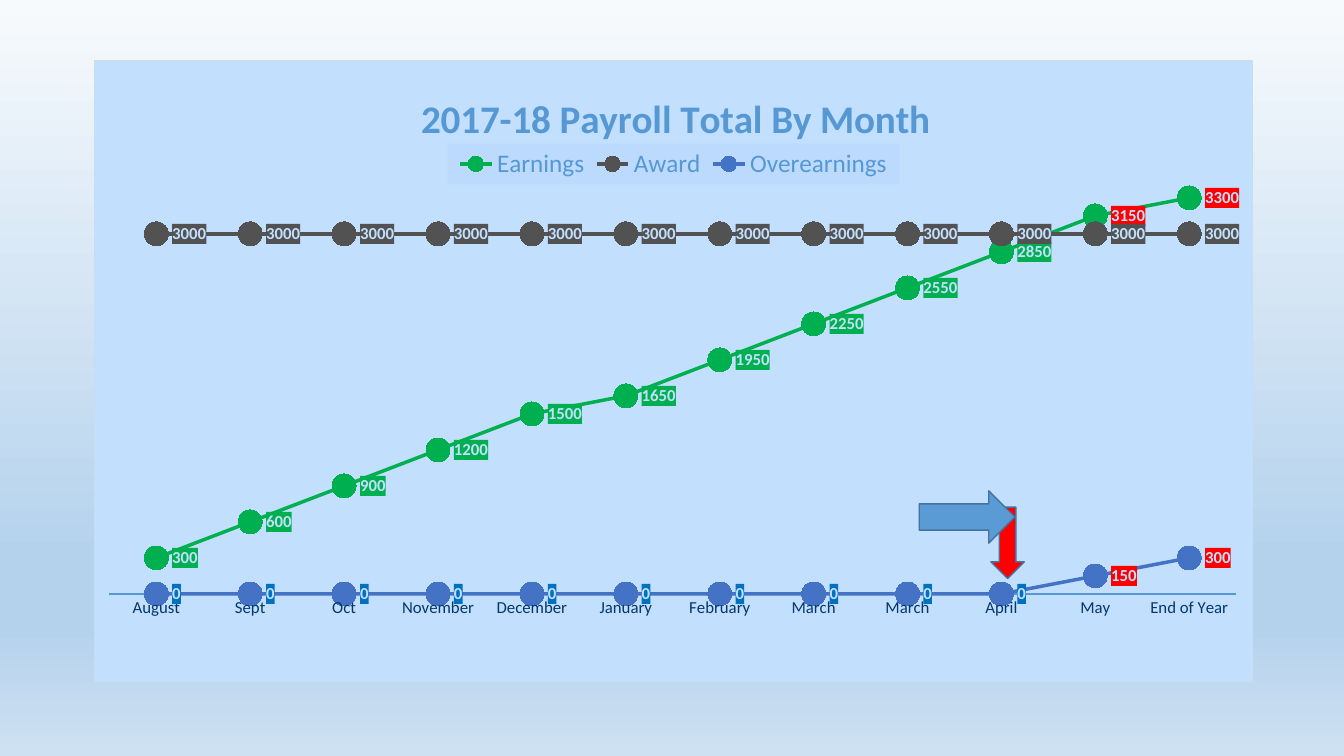
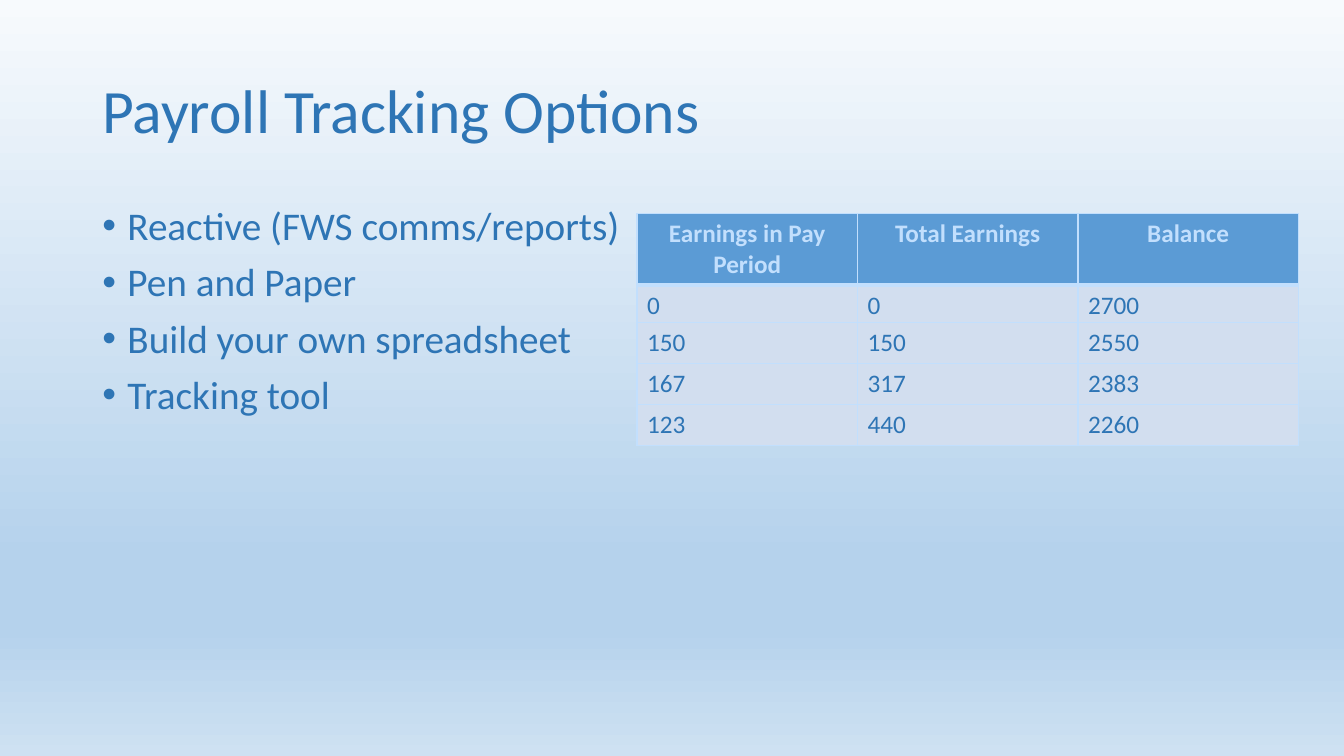
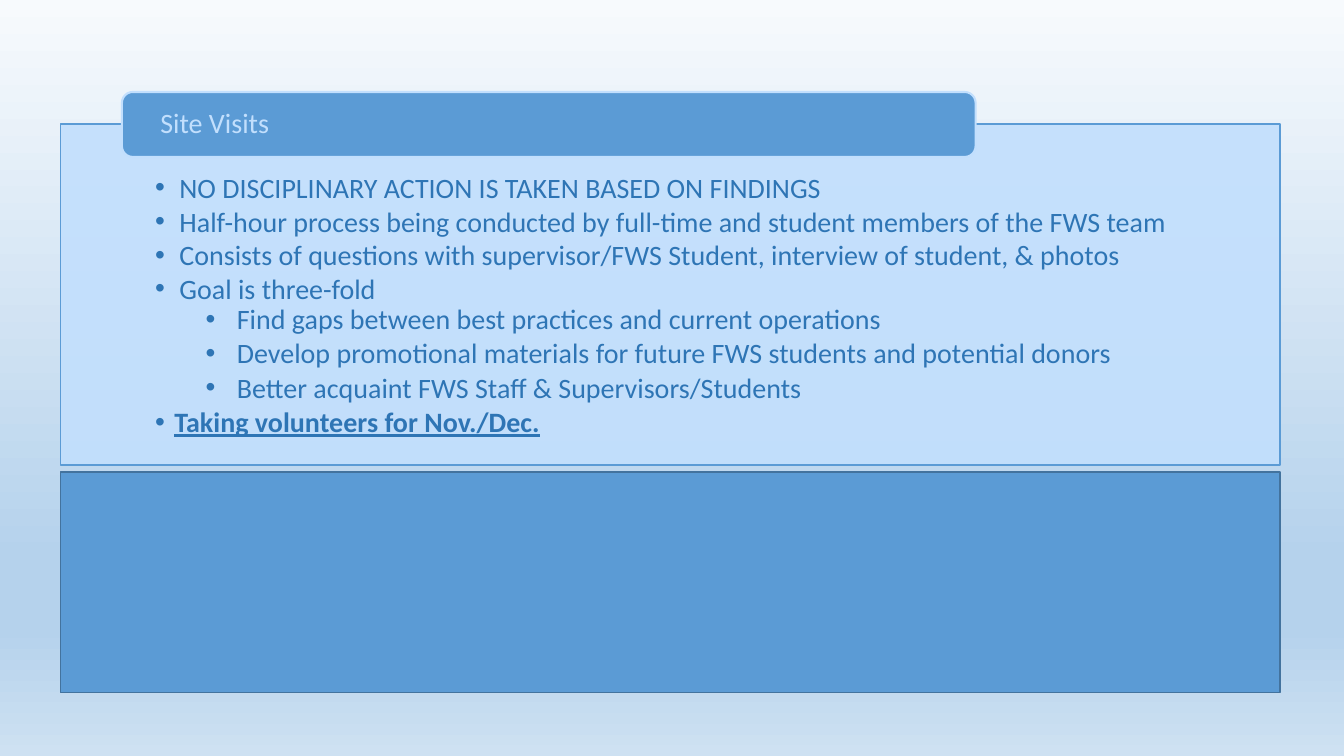
from lxml.etree import SubElement
from pptx import Presentation
from pptx.chart.data import CategoryChartData
from pptx.dml.color import RGBColor
from pptx.enum.chart import XL_CHART_TYPE as ChartType, XL_LABEL_POSITION as LabelPosition
from pptx.enum.chart import XL_LEGEND_POSITION as LegendPosition, XL_MARKER_STYLE as MarkerStyle
from pptx.enum.chart import XL_TICK_MARK as TickMark
from pptx.enum.shapes import MSO_SHAPE as Shape
from pptx.enum.text import MSO_ANCHOR as Anchor, PP_ALIGN as Align
from pptx.oxml import parse_xml
from pptx.oxml.ns import nsdecls, qn
from pptx.util import Pt

FONT = "Calibri"
COLORS = {
    "text": "2E75B5", "pale": "C2DFFD", "accent": "5B9BD5", "outline": "43739E",
    "row": "D2DEEF", "heading": "5698D4", "months": "04376C", "chart_edge": "C7DDF1",
    "legend": "BBDAFD", "green": "00B050", "gray": "525252", "indigo": "4472C4",
    "blue": "0070C0", "red": "FF0000",
}
RGB = {name: RGBColor.from_string(value) for name, value in COLORS.items()}
BACKGROUND = [(0, "F7FAFD"), (74, "B5D2EC"), (83, "B5D2EC"), (100, "CEE1F2")]


def write(frame, text, size=18, color="text", bold=False, underline=False, align=Align.LEFT,
          spacing=1.0, before=0, after=0, bullet=False, left=0, hanging=0):
    para = frame.paragraphs[0]
    if para.runs:
        para = frame.add_paragraph()
    para.alignment, para.line_spacing = align, spacing
    para.space_before, para.space_after = Pt(before), Pt(after)
    if bullet:
        props = para._p.get_or_add_pPr()
        props.set("marL", str(Pt(left)))
        props.set("indent", str(-Pt(hanging)))
        SubElement(props, qn("a:buFont"), typeface="Arial")
        SubElement(props, qn("a:buChar"), char="•")
    span = para.add_run()
    span.text = text
    font = span.font
    font.name, font.size, font.bold, font.underline = FONT, Pt(size), bold, underline
    font.color.rgb = RGB[color]


def add_block(page, kind, bounds, fill, line, width=1):
    block = page.shapes.add_shape(kind, *map(Pt, bounds))
    block.shadow.inherit = False
    block.fill.solid()
    block.fill.fore_color.rgb = RGB[fill]
    block.line.color.rgb = RGB[line]
    block.line.width = Pt(width)
    return block


deck = Presentation()
deck.slide_width, deck.slide_height = Pt(960), Pt(540)

backdrop = deck.slide_master.background.fill
backdrop.gradient()
backdrop.gradient_angle = 270
stops = deck.slide_master._element.find(".//" + qn("a:gsLst"))
for stop in list(stops):
    stops.remove(stop)
for position, color in BACKGROUND:
    stop = SubElement(stops, qn("a:gs"), pos=str(position * 1000))
    SubElement(stop, qn("a:srgbClr"), val=color)

chart_page, options_page, visits_page = [deck.slides.add_slide(deck.slide_layouts[6]) for _ in range(3)]

payroll = CategoryChartData()
payroll.categories = ["August", "Sept", "Oct", "November", "December", "January", "February",
                      "March", "March", "April", "May", "End of Year"]
payroll.add_series("Earnings", [300, 600, 900, 1200, 1500, 1650, 1950, 2250, 2550, 2850, 3150, 3300])
payroll.add_series("Award", [3000] * 12)
payroll.add_series("Overearnings", [0] * 10 + [150, 300])
chart = chart_page.shapes.add_chart(ChartType.LINE_MARKERS, Pt(67), Pt(43.2), Pt(828), Pt(444), payroll).chart
chart.font.name, chart.font.size = FONT, Pt(10)
chart.font.color.rgb = RGB["text"]
chart.has_title = True
write(chart.chart_title.text_frame, "2017-18 Payroll Total By Month", size=28, color="heading",
      bold=True, align=Align.CENTER)
chart.has_legend = True
chart.legend.position = LegendPosition.TOP
chart.legend.include_in_layout = False
chart.legend.font.name, chart.legend.font.size = FONT, Pt(18)
chart.legend.font.color.rgb = RGB["heading"]
chart.plots[0].vary_by_categories = False

months = chart.category_axis
months.major_tick_mark = TickMark.NONE
months.tick_labels.font.name, months.tick_labels.font.size = FONT, Pt(12)
months.tick_labels.font.color.rgb = RGB["months"]
months.format.line.color.rgb = RGB["heading"]
months.format.line.width = Pt(1.5)
amounts = chart.value_axis
amounts.minimum_scale, amounts.maximum_scale = 0, 3500
amounts.has_major_gridlines = False
amounts.visible = False

panels = [(chart._chartSpace, "pale", "chart_edge"), (chart.legend._element, "legend", None)]
series_styles = [("green", "green", [10, 11]), ("gray", "gray", []), ("indigo", "blue", [10, 11])]
for series, (color, label_fill, over_limit) in zip(chart.plots[0].series, series_styles):
    series.smooth = False
    points = [series.points[index] for index in over_limit]
    for item in [series] + points:
        item.format.line.color.rgb = RGB[color]
        item.format.line.width = Pt(2.5)
        marker_color = RGB[color if item is series else "red"]
        item.marker.style, item.marker.size = MarkerStyle.CIRCLE, 17
        item.marker.format.fill.solid()
        item.marker.format.fill.fore_color.rgb = marker_color
        item.marker.format.line.color.rgb = marker_color
    series.data_labels.show_value = True
    for label in [series.data_labels] + [point.data_label for point in points]:
        label.position = LabelPosition.RIGHT
        label.font.name, label.font.size, label.font.bold = FONT, Pt(12), True
        label.font.color.rgb = RGB["pale"]
    for holder in series._element.xpath("c:dLbls | c:dLbls/c:dLbl"):
        panels.append((holder, "red" if holder.tag == qn("c:dLbl") else label_fill, None))

for holder, fill, edge in panels:
    border = f'<a:ln w="9525"><a:solidFill><a:srgbClr val="{COLORS[edge]}"/></a:solidFill></a:ln>' if edge else ""
    holder.find(qn("c:txPr")).addprevious(parse_xml(
        f'<c:spPr {nsdecls("c", "a")}><a:solidFill><a:srgbClr val="{COLORS[fill]}"/></a:solidFill>{border}</c:spPr>'))

layouts = [
    (chart._chartSpace.chart.plotArea, 0, {"x": 0.013, "y": 0.182, "w": 0.973, "h": 0.677}),
    (chart.chart_title._element, 1, {"x": 0.276, "y": 0.038}),
    (chart.legend._element, 1, {"x": 0.305, "y": 0.133, "w": 0.39, "h": 0.066}),
]
for holder, place, values in layouts:
    for old in holder.findall(qn("c:layout")):
        holder.remove(old)
    layout = parse_xml(f'<c:layout {nsdecls("c")}><c:manualLayout/></c:layout>')
    if place == 0:
        SubElement(layout[0], qn("c:layoutTarget"), val="inner")
    for side in ("x", "y"):
        SubElement(layout[0], qn(f"c:{side}Mode"), val="edge")
    for name, value in values.items():
        SubElement(layout[0], qn(f"c:{name}"), val=str(value))
    holder.insert(place, layout)

add_block(chart_page, Shape.DOWN_ARROW, (707.8, 362.2, 23.8, 51), "red", "outline")
add_block(chart_page, Shape.RIGHT_ARROW, (656.6, 350.6, 68.4, 37.4), "accent", "outline")

title_box = options_page.shapes.add_textbox(Pt(66), Pt(28.8), Pt(828), Pt(104.4))
title_box.text_frame.word_wrap = True
title_box.text_frame.vertical_anchor = Anchor.MIDDLE
write(title_box.text_frame, "Payroll Tracking Options", size=44, spacing=0.9)

options_box = options_page.shapes.add_textbox(Pt(66), Pt(144), Pt(828), Pt(342.7))
options_box.text_frame.word_wrap = True
for option in ["Reactive (FWS comms/reports)", "Pen and Paper", "Build your own spreadsheet", "Tracking tool"]:
    write(options_box.text_frame, option, size=28, spacing=0.9, before=10, bullet=True, left=18, hanging=18)

ROW_HEIGHT, HEADER_HEIGHT, COLUMN_WIDTH = 29.2, 51, 157.5
HEADER = ["Earnings in Pay Period", "Total Earnings", "Balance"]
tables = [(152.6, [HEADER, ["0", "0", "2700"]])]
for index, values in enumerate([["150", "150", "2550"], ["167", "317", "2383"], ["123", "440", "2260"]]):
    tables.append((230.4 + index * ROW_HEIGHT, [values]))
for top, rows in tables:
    heights = [HEADER_HEIGHT if values is HEADER else ROW_HEIGHT for values in rows]
    table = options_page.shapes.add_table(len(rows), 3, Pt(455), Pt(top), Pt(3 * COLUMN_WIDTH), Pt(sum(heights))).table
    table.first_row = rows[0] is HEADER
    table.horz_banding = False
    for column in table.columns:
        column.width = Pt(COLUMN_WIDTH)
    for row, height, values in zip(table.rows, heights, rows):
        row.height = Pt(height)
        header = values is HEADER
        for cell, value in zip(row.cells, values):
            write(cell.text_frame, value, color="pale" if header else "text", bold=header,
                  align=Align.CENTER if header else Align.LEFT)
            props = cell._tc.get_or_add_tcPr()
            for side in ("lnL", "lnR", "lnT", "lnB"):
                width = 3 if header and side == "lnB" else 1
                border = SubElement(props, qn(f"a:{side}"), w=str(Pt(width)))
                SubElement(SubElement(border, qn("a:solidFill")), qn("a:srgbClr"), val=COLORS["pale"])
            cell.fill.solid()
            cell.fill.fore_color.rgb = RGB["accent" if header else "row"]

visits = add_block(visits_page, Shape.RECTANGLE, (43.2, 88.7, 871.2, 243.4), "pale", "accent")
SubElement(visits._element.spPr.find(".//" + qn("a:srgbClr")), qn("a:alpha"), val="90000")
frame = visits.text_frame
frame.word_wrap = True
frame.vertical_anchor = Anchor.TOP
frame.margin_left = frame.margin_right = Pt(67.7)
frame.margin_top, frame.margin_bottom = Pt(33.1), Pt(11.5)
for fact in ["NO DISCIPLINARY ACTION IS TAKEN BASED ON FINDINGS",
             "Half-hour process being conducted by full-time and student members of the FWS team",
             "Consists of questions with supervisor/FWS Student, interview of student, & photos",
             "Goal is three-fold"]:
    write(frame, fact, size=20, bullet=True, left=17.3, hanging=17.3)
for goal in ["Find gaps between best practices and current operations",
             "Develop promotional materials for future FWS students and potential donors",
             "Better acquaint FWS Staff & Supervisors/Students"]:
    write(frame, goal, size=20, spacing=0.9, after=3, bullet=True, left=58.3, hanging=22.3)
write(frame, "Taking volunteers for Nov./Dec.", size=20, bold=True, underline=True, spacing=0.9,
      after=3, bullet=True, left=13.7, hanging=13.7)

tab = add_block(visits_page, Shape.ROUNDED_RECTANGLE, (87.1, 65.7, 609.8, 46.4), "accent", "pale", width=1.5)
tab.text_frame.word_wrap = True
tab.text_frame.vertical_anchor = Anchor.MIDDLE
tab.text_frame.margin_left = tab.text_frame.margin_right = Pt(25.2)
write(tab.text_frame, "Site Visits", size=20, color="pale", spacing=0.9)

add_block(visits_page, Shape.RECTANGLE, (43.2, 337, 871.2, 157.7), "accent", "outline")

deck.save("out.pptx")
